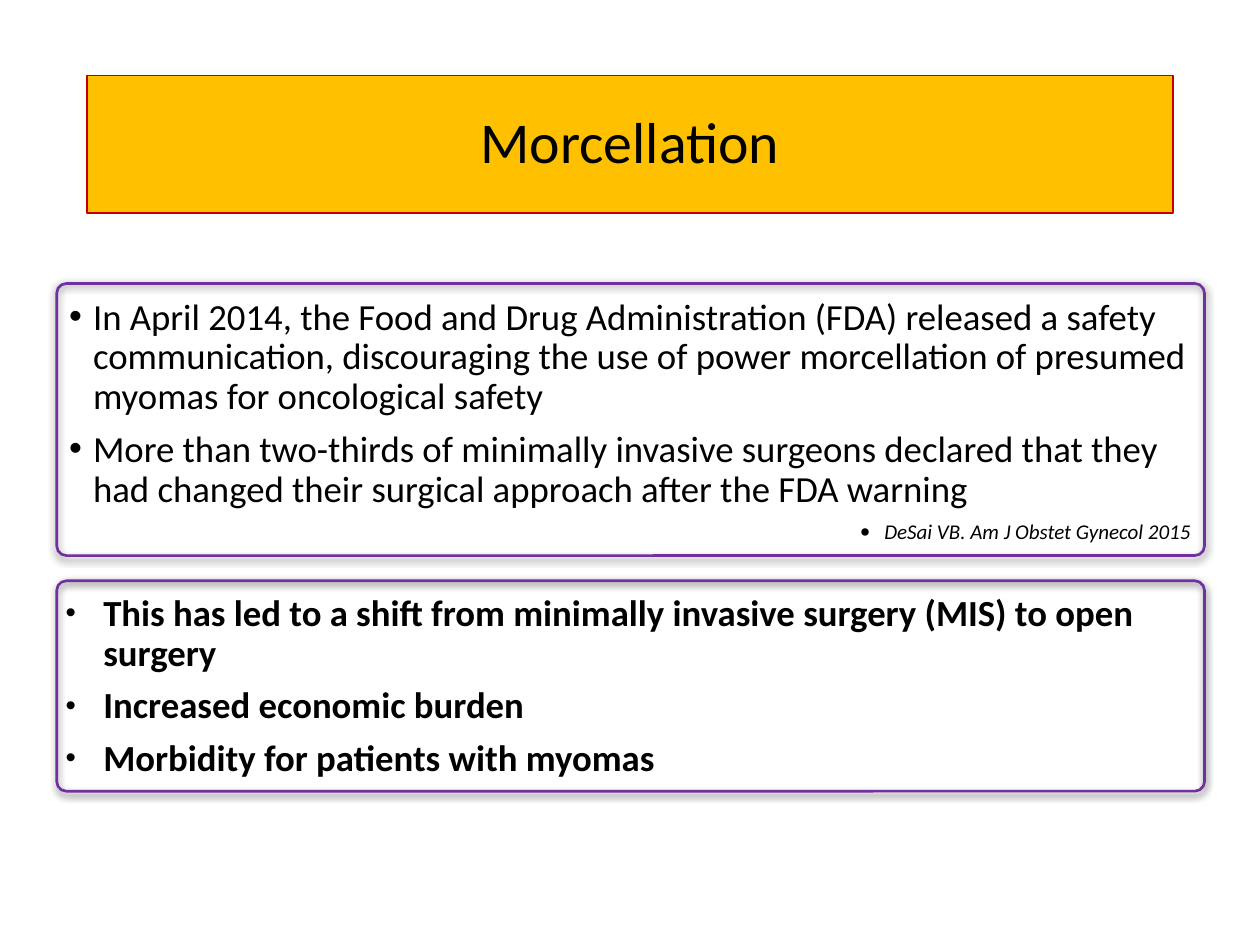
from lxml import etree
from pptx import Presentation
from pptx.dml.color import RGBColor
from pptx.enum.shapes import MSO_SHAPE
from pptx.enum.text import MSO_ANCHOR, PP_ALIGN
from pptx.oxml.ns import qn
from pptx.util import Inches, Pt

RECT, ROUND = MSO_SHAPE.RECTANGLE, MSO_SHAPE.ROUNDED_RECTANGLE
LEFT, CENTER, RIGHT = PP_ALIGN.LEFT, PP_ALIGN.CENTER, PP_ALIGN.RIGHT
MIDDLE = MSO_ANCHOR.MIDDLE

BLACK = RGBColor(0x00, 0x00, 0x00)
GOLD = RGBColor(0xFF, 0xC0, 0x00)
RED = RGBColor(0xC0, 0x00, 0x00)
PURPLE = RGBColor(0x70, 0x30, 0xA0)

# Content
TITLE = "Morcellation"
FACTS = [
    "In April 2014, the Food and Drug Administration (FDA) released a safety "
    "communication, discouraging the use of power morcellation of presumed "
    "myomas for oncological safety",
    "More than two-thirds of minimally invasive surgeons declared that they "
    "had changed their surgical approach after the FDA warning",
]
EFFECTS = [
    "This has led to a shift from minimally invasive surgery (MIS) to open surgery",
    "Increased economic burden",
    "Morbidity for patients with myomas",
]
SOURCE = ["DeSai VB. Am J Obstet Gynecol 2015"]

# Lists: lines, box, indent, bullet %, size, bold, italic, align, insets
LISTS = [
    (FACTS, (0.45, 2.32, 9.11, 1.97), 0.19, 100, 21, False, False, LEFT, (0.1, 0.05)),
    (EFFECTS, (0.45, 4.68, 9.11, 1.58), 0.3, 80, 21, True, False, LEFT, (0.07, 0.04)),
    (SOURCE, (6.16, 4.09, 3.39, 0.27), 0.19, 130, 12, False, True, RIGHT, (0.1, 0.05)),
]
# Frames: top, height, corner
FRAMES = [(2.25, 2.16, 0.036), (4.61, 1.67, 0.046)]


def style(para, size, align, bold=False, italic=False):
    para.alignment = align
    para.line_spacing = 0.9
    font = para.font
    font.name, font.size = "Calibri", Pt(size)
    font.bold, font.italic = bold, italic
    font.color.rgb = BLACK


def bullet(para, indent, scale):
    props = para._p.get_or_add_pPr()
    props.set("marL", str(Inches(indent)))
    props.set("indent", str(-Inches(indent)))
    etree.SubElement(props, qn("a:buSzPct"), val=str(scale * 1000))
    etree.SubElement(props, qn("a:buFont"), typeface="Arial")
    etree.SubElement(props, qn("a:buChar"), char="•")


def add_list(slide, lines, box, indent, scale, size, bold, italic, align, inset):
    frame = slide.shapes.add_textbox(*map(Inches, box)).text_frame
    frame.word_wrap = True
    frame.margin_left = frame.margin_right = Inches(inset[0])
    frame.margin_top = frame.margin_bottom = Inches(inset[1])
    for i, line in enumerate(lines):
        para = frame.add_paragraph() if i else frame.paragraphs[0]
        para.text = line
        bullet(para, indent, scale)
        style(para, size, align, bold, italic)
        if i:
            para.space_before = Pt(7.5)


def add_shadow(shape):
    shape.shadow.inherit = False
    effects = shape._element.spPr.find(qn("a:effectLst"))
    outer = etree.SubElement(
        effects, qn("a:outerShdw"), blurRad=str(Pt(4.5)), dist=str(Pt(1.5)),
        dir="5400000", algn="ctr", rotWithShape="0")
    color = etree.SubElement(outer, qn("a:srgbClr"), val=str(BLACK))
    etree.SubElement(color, qn("a:alpha"), val="63000")


def main():
    prs = Presentation()
    prs.slide_width, prs.slide_height = Inches(10), Inches(7.5)
    slide = prs.slides.add_slide(prs.slide_layouts[6])

    # Title bar
    bar = slide.shapes.add_shape(RECT, *map(Inches, (0.69, 0.6, 8.62, 1.09)))
    bar.shadow.inherit = False
    bar.fill.solid()
    bar.fill.fore_color.rgb = GOLD
    bar.line.color.rgb = RED
    bar.line.width = Pt(0.75)
    bar.text_frame.vertical_anchor = MIDDLE
    head = bar.text_frame.paragraphs[0]
    head.text = TITLE
    style(head, 33, CENTER)

    # Bulleted text
    for item in LISTS:
        add_list(slide, *item)

    # Rounded frames
    for top, height, corner in FRAMES:
        edge = slide.shapes.add_shape(ROUND, *map(Inches, (0.45, top, 9.11, height)))
        edge.adjustments[0] = corner
        edge.fill.background()
        edge.line.color.rgb = PURPLE
        edge.line.width = Pt(1.5)
        add_shadow(edge)

    prs.save("out.pptx")


if __name__ == "__main__":
    main()
